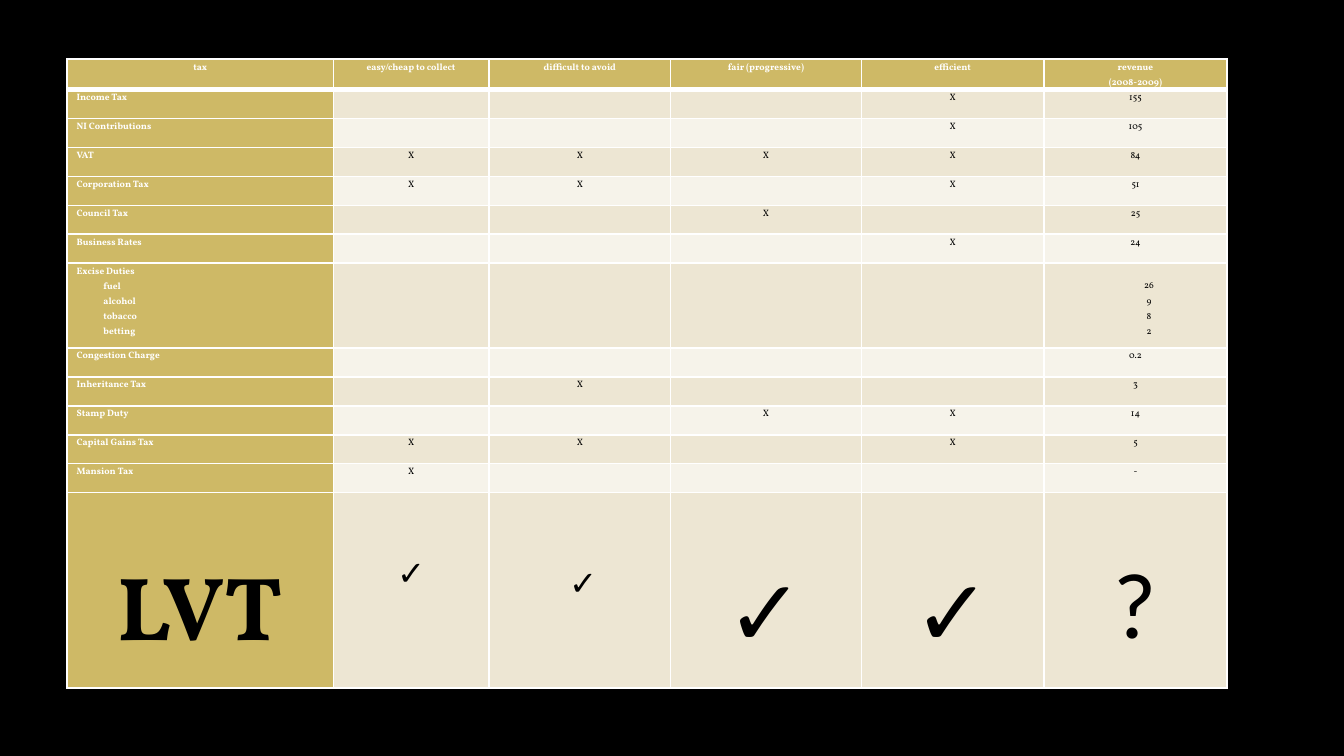
"""Build a slide comparing UK taxes with a land value tax."""
from dataclasses import dataclass

from lxml.etree import SubElement
from pptx import Presentation
from pptx.dml.color import RGBColor
from pptx.enum.text import PP_ALIGN as Align
from pptx.oxml.ns import qn
from pptx.table import _Cell as Cell
from pptx.util import Inches, Pt

BLACK = RGBColor(0x00, 0x00, 0x00)
WHITE = RGBColor(0xFF, 0xFF, 0xFF)
GOLD = RGBColor(0xCE, 0xB9, 0x66)
SAND = RGBColor(0xED, 0xE6, 0xD3)
CREAM = RGBColor(0xF6, 0xF3, 0xEA)

SLIDE_WIDTH = 10
SLIDE_HEIGHT = SLIDE_WIDTH * 9 / 16
COLUMN_WIDTHS = (1.98, 1.16, 1.35, 1.42, 1.36, 1.36)
HEADER_HEIGHT, EXCISE_HEIGHT, LVT_HEIGHT = 0.17, 0.63, 1.28
ROW_HEIGHT = 2.37 / 11
HEADINGS = (
    "tax", "easy/cheap to collect", "difficult to avoid",
    "fair (progressive)", "efficient", "revenue\n(2008-2009)",
)


@dataclass(frozen=True)
class Tax:
    name: str
    marks: str
    revenue: str


@dataclass(frozen=True)
class Style:
    size: float = 5
    font: str = "Vollkorn"
    color: RGBColor = BLACK
    bold: bool = False
    align: Align = Align.CENTER
    spacing: float = 1.15
    margin_top: float = 0
    indent: float = 0


TAXES = (
    Tax("Income Tax", "...X", "155"),
    Tax("NI Contributions", "...X", "105"),
    Tax("VAT", "XXXX", "84"),
    Tax("Corporation Tax", "XX.X", "51"),
    Tax("Council Tax", "..X.", "25"),
    Tax("Business Rates", "...X", "24"),
    Tax("Excise Duties\nfuel\nalcohol\ntobacco\nbetting", "....", "26\n9\n8\n2"),
    Tax("Congestion Charge", "....", "0.2"),
    Tax("Inheritance Tax", ".X..", "3"),
    Tax("Stamp Duty", "..XX", "14"),
    Tax("Capital Gains Tax", "XX.X", "5"),
    Tax("Mansion Tax", "X...", "-"),
)
HEADER = Style(color=WHITE, bold=True)
NAME = Style(color=WHITE, bold=True, align=Align.LEFT)
MARK = Style()
AMOUNTS = Style(margin_top=0.11, indent=0.2)
LVT_CELLS = (
    ("LVT", Style(48, bold=True, spacing=1.5)),
    ("✓", Style(18, "Calibri", spacing=1.5, margin_top=0.3)),
    ("✓", Style(18, spacing=1.5, margin_top=0.35, indent=0.05)),
    ("✓", Style(50, spacing=1.5)),
    ("✓", Style(50, spacing=1.5)),
    ("?", Style(50, "Calibri", spacing=1.5)),
)


def set_borders(cell: Cell, top: float, bottom: float) -> None:
    """Outline a cell in white, with its own top and bottom widths."""
    properties = cell._tc.get_or_add_tcPr()
    for side, width in (("L", 1), ("R", 1), ("T", top), ("B", bottom)):
        line = SubElement(properties, qn(f"a:ln{side}"), w=str(Pt(width)))
        fill = SubElement(line, qn("a:solidFill"))
        SubElement(fill, qn("a:srgbClr"), val=str(WHITE))


def indent_paragraph(para, inches: float) -> None:
    """Move a paragraph's left edge to the right."""
    properties = para._p.get_or_add_pPr()
    properties.set("marL", str(Inches(inches)))
    properties.set("indent", "0")


def fill_cell(cell: Cell, text: str, style: Style, color: RGBColor,
              top: float = 1, bottom: float = 1) -> None:
    """Write, format, outline and colour one cell."""
    cell.margin_left = cell.margin_right = Inches(0.07)
    cell.margin_top, cell.margin_bottom = Inches(style.margin_top), 0
    cell.text_frame.text = text
    for para in cell.text_frame.paragraphs:
        para.alignment = style.align
        para.line_spacing = style.spacing
        if style.indent:
            indent_paragraph(para, style.indent)
        for span in para.runs:
            span.font.size = Pt(style.size)
            span.font.name = style.font
            span.font.bold = style.bold
            span.font.color.rgb = style.color
        if not para.runs:
            SubElement(para._p, qn("a:endParaRPr"), sz=str(int(style.size * 100)))
    set_borders(cell, top, bottom)
    cell.fill.solid()
    cell.fill.fore_color.rgb = color


def build_table(page) -> None:
    """Add the tax table to the page."""
    heights = [HEADER_HEIGHT]
    heights += [EXCISE_HEIGHT if "\n" in tax.name else ROW_HEIGHT for tax in TAXES]
    heights.append(LVT_HEIGHT)
    table = page.shapes.add_table(
        len(heights), len(COLUMN_WIDTHS), Inches(0.5), Inches(0.44),
        Inches(sum(COLUMN_WIDTHS)), Inches(sum(heights)),
    ).table
    table.first_row = table.horz_banding = False
    for column, width in zip(table.columns, COLUMN_WIDTHS):
        column.width = Inches(width)
    for row, height in zip(table.rows, heights):
        row.height = Inches(height)

    for column, heading in enumerate(HEADINGS):
        fill_cell(table.cell(0, column), heading, HEADER, GOLD, bottom=3)
    for row, tax in enumerate(TAXES, start=1):
        band = SAND if row % 2 else CREAM
        top = 3 if row == 1 else 1
        fill_cell(table.cell(row, 0), tax.name, NAME, GOLD, top)
        for para in table.cell(row, 0).text_frame.paragraphs[1:]:
            indent_paragraph(para, 0.2)
        for column, mark in enumerate(tax.marks, start=1):
            fill_cell(table.cell(row, column), mark.strip("."), MARK, band, top)
        style = AMOUNTS if "\n" in tax.revenue else MARK
        fill_cell(table.cell(row, 5), tax.revenue, style, band, top)
    for column, (text, style) in enumerate(LVT_CELLS):
        color = SAND if column else GOLD
        fill_cell(table.cell(len(heights) - 1, column), text, style, color)


def main() -> None:
    """Create the deck and save it."""
    deck = Presentation()
    deck.slide_width, deck.slide_height = Inches(SLIDE_WIDTH), Inches(SLIDE_HEIGHT)
    page = deck.slides.add_slide(deck.slide_layouts[6])
    page.background.fill.solid()
    page.background.fill.fore_color.rgb = BLACK
    build_table(page)
    deck.save("out.pptx")


if __name__ == "__main__":
    main()
